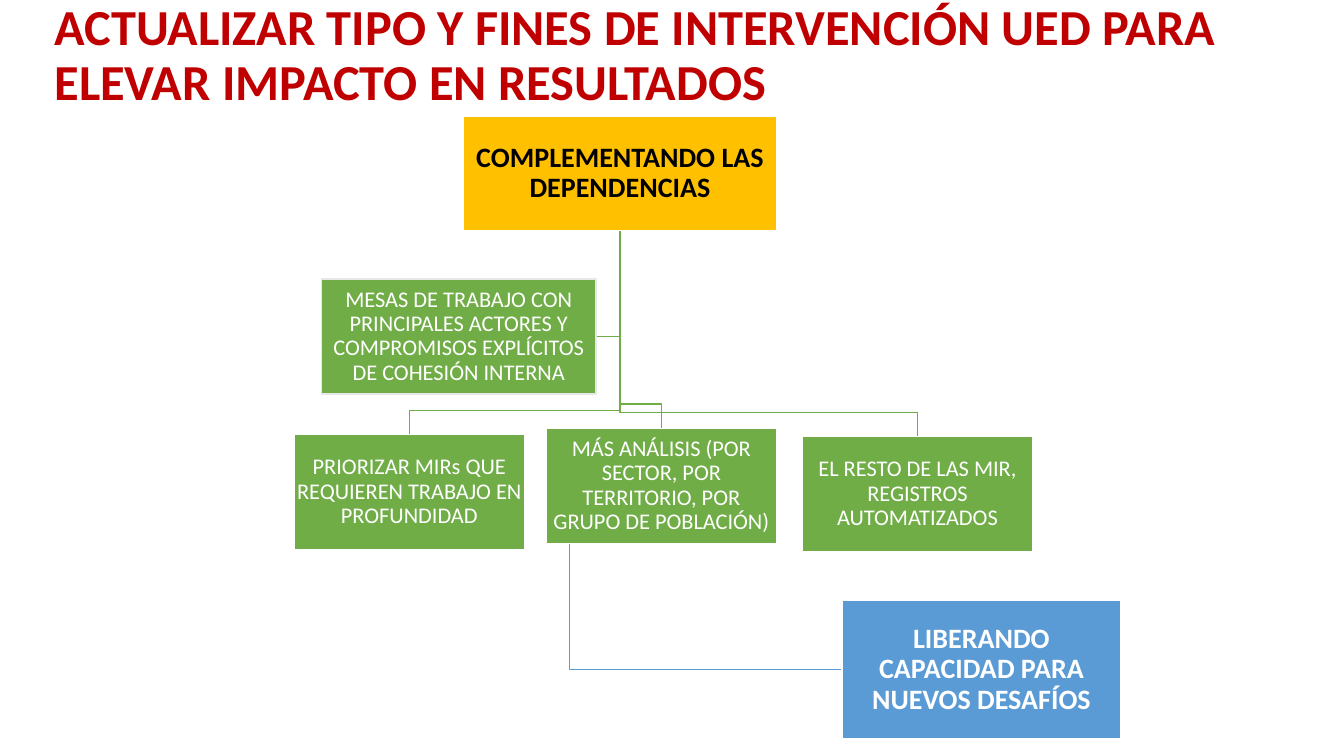
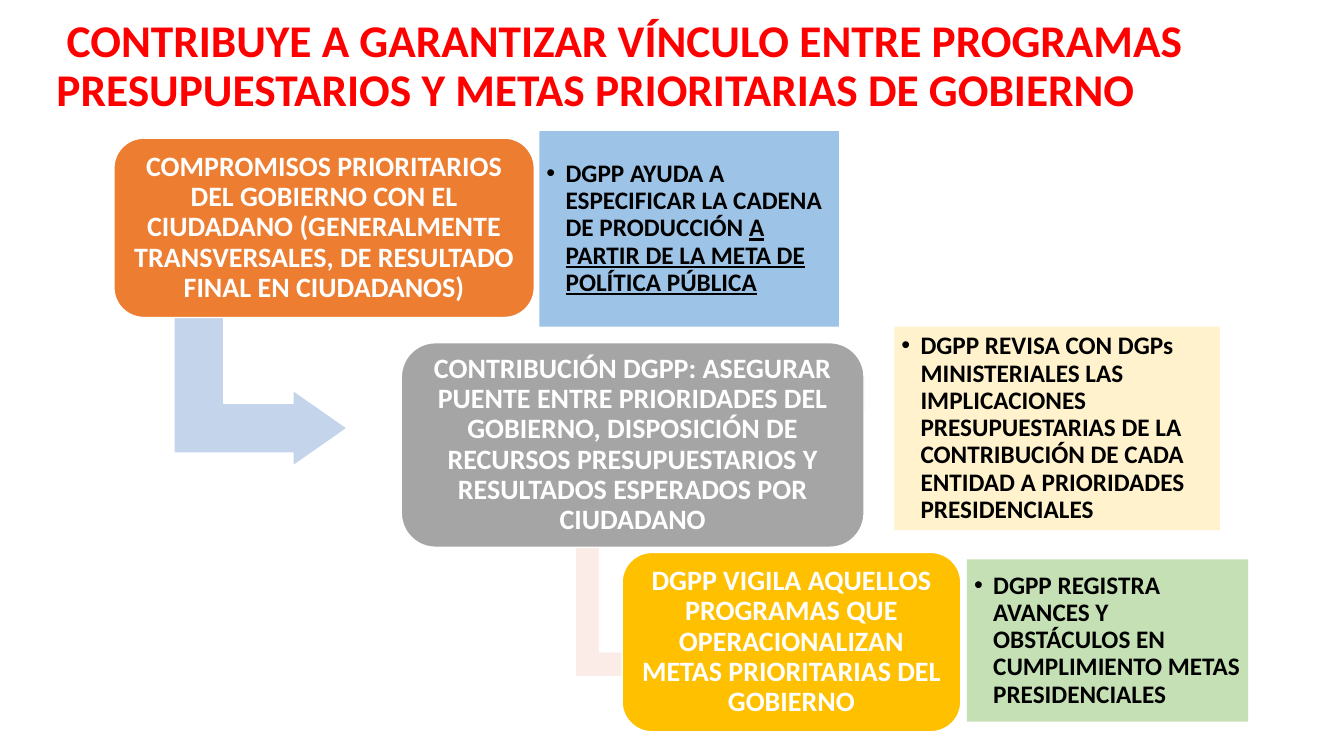
from lxml import etree
from pptx import Presentation, util as u
from pptx.dml.color import RGBColor
from pptx.enum import shapes, text
from pptx.oxml.ns import qn

FONT = "Calibri"
COLORS = {
    "dark red": "C00000", "red": "FF0000", "white": "FFFFFF", "black": "000000",
    "green": "70AD47", "blue": "5B9BD5", "gold": "FFC000", "orange": "ED7D31",
    "gray": "A5A5A5", "edge": "E7E7E7", "sky": "9DC3E6", "cream": "FFF2CC",
    "mint": "C5E0B4", "pale blue": "C4D5EB", "pale pink": "FCECE8",
}
SHAPE = shapes.MSO_SHAPE

CHART_TITLE = "ACTUALIZAR TIPO Y FINES DE INTERVENCIÓN UED PARA ELEVAR IMPACTO EN RESULTADOS"
MAIN = dict(size=20, bold=True)
DETAIL = dict(size=16, color="white")
# name: (left, top, width, height), fill, edge, wording, format
CHART_BOXES = {
    "root": ((4.6, 1.15, 3.1, 1.14), "gold", "white",
             "COMPLEMENTANDO LAS DEPENDENCIAS", dict(MAIN, color="black")),
    "prioritize": ((2.92, 4.31, 2.28, 1.14), "green", "white",
                   "PRIORIZAR MIRs QUE REQUIEREN TRABAJO EN PROFUNDIDAD", DETAIL),
    "rest": ((7.96, 4.33, 2.28, 1.14), "green", "white",
             "EL RESTO DE LAS MIR, REGISTROS AUTOMATIZADOS", DETAIL),
    "analysis": ((5.42, 4.25, 2.28, 1.14), "green", "white",
                 "MÁS ANÁLISIS (POR SECTOR, POR TERRITORIO, POR GRUPO DE POBLACIÓN)", DETAIL),
    "capacity": ((8.35, 5.96, 2.77, 1.37), "blue", "white",
                 "LIBERANDO CAPACIDAD PARA NUEVOS DESAFÍOS", dict(MAIN, color="white")),
    "tables": ((3.19, 2.77, 2.72, 1.14), "green", "edge",
               "MESAS DE TRABAJO CON PRINCIPALES ACTORES Y COMPROMISOS EXPLÍCITOS "
               "DE COHESIÓN INTERNA", DETAIL),
}
BRANCHES = ("analysis", "rest", "prioritize")
BRANCH_DROP = 0.24

STEPS_TITLE = (" CONTRIBUYE A GARANTIZAR VÍNCULO ENTRE PROGRAMAS PRESUPUESTARIOS "
               "Y METAS PRIORITARIAS DE GOBIERNO")
# Each step: its box, its note and, except for the last, the arrow to the next step
STEPS = [
    dict(box=(1.13, 1.37, 4.17, 1.78), fill="orange",
         label="COMPROMISOS PRIORITARIOS DEL GOBIERNO CON EL CIUDADANO "
               "(GENERALMENTE TRANSVERSALES, DE RESULTADO FINAL EN CIUDADANOS)",
         note_box=(5.35, 1.3, 2.97, 1.94), note_fill="sky",
         note=["DGPP AYUDA A ESPECIFICAR LA CADENA DE PRODUCCIÓN ",
               ("A PARTIR DE LA META DE POLÍTICA PÚBLICA", True)],
         arrow=(1.83, 3.01, 1.51, 1.72), arrow_fill="pale blue"),
    dict(box=(3.98, 3.4, 4.59, 2.03), fill="gray",
         label="CONTRIBUCIÓN DGPP: ASEGURAR PUENTE ENTRE PRIORIDADES DEL GOBIERNO, "
               "DISPOSICIÓN DE RECURSOS PRESUPUESTARIOS Y RESULTADOS ESPERADOS POR CIUDADANO",
         note_box=(8.87, 3.24, 3.23, 2.02), note_fill="cream",
         note="DGPP REVISA CON DGPs MINISTERIALES LAS IMPLICACIONES PRESUPUESTARIAS "
              "DE LA CONTRIBUCIÓN DE CADA ENTIDAD A PRIORIDADES PRESIDENCIALES",
         arrow=(5.32, 5.65, 1.51, 0.74), arrow_fill="pale pink"),
    dict(box=(6.17, 5.48, 3.36, 1.78), fill="gold",
         label="DGPP VIGILA AQUELLOS PROGRAMAS QUE OPERACIONALIZAN METAS PRIORITARIAS "
               "DEL GOBIERNO",
         note_box=(9.59, 5.55, 2.79, 1.61), note_fill="mint",
         note="DGPP REGISTRA AVANCES Y OBSTÁCULOS EN CUMPLIMIENTO METAS PRESIDENCIALES"),
]


def rgb(name):
    return RGBColor.from_string(COLORS[name])


def write(shape, content, size=16, color="black", bold=False, inset=None,
          align=text.PP_ALIGN.CENTER, bullet=False):
    """Write a string, or a list of strings and (string, underlined) pairs."""
    frame = shape.text_frame
    frame.word_wrap = True
    frame.auto_size = text.MSO_AUTO_SIZE.NONE
    frame.vertical_anchor = text.MSO_ANCHOR.MIDDLE
    if inset is not None:
        frame.margin_left = frame.margin_right = u.Inches(inset)
        frame.margin_top = frame.margin_bottom = u.Inches(inset)
    paragraph = frame.paragraphs[0]
    paragraph.alignment = align
    paragraph.line_spacing = 0.9
    if bullet:
        props = paragraph._p.get_or_add_pPr()
        props.set("marL", str(u.Inches(0.19)))
        props.set("indent", str(u.Inches(-0.19)))
        etree.SubElement(props, qn("a:buFont")).set("typeface", "Arial")
        etree.SubElement(props, qn("a:buChar")).set("char", "•")
    for part in [content] if isinstance(content, str) else content:
        words, underlined = (part, False) if isinstance(part, str) else part
        run = paragraph.add_run()
        run.text = words
        run.font.name, run.font.size = FONT, u.Pt(size)
        run.font.bold = bold
        run.font.color.rgb = rgb(color)
        if underlined:
            run.font.underline = True


def add_titled_slide(prs, title, box, size, color):
    slide = prs.slides.add_slide(prs.slide_layouts[5])
    heading = slide.shapes.title
    heading.left, heading.top, heading.width, heading.height = map(u.Inches, box)
    write(heading, title, size=size, color=color, bold=True, align=text.PP_ALIGN.LEFT)
    return slide


def add_block(slide, kind, box, fill, edge=None):
    block = slide.shapes.add_shape(kind, *map(u.Inches, box))
    block.shadow.inherit = False
    block.fill.solid()
    block.fill.fore_color.rgb = rgb(fill)
    if edge:
        block.line.color.rgb = rgb(edge)
        block.line.width = u.Pt(1)
    else:
        block.line.fill.background()
    return block


def add_elbow(slide, points, color):
    """Draw an open line through points given in inches."""
    start, *others = [(u.Inches(x), u.Inches(y)) for x, y in points]
    builder = slide.shapes.build_freeform(*start)
    builder.add_line_segments(others, close=False)
    elbow = builder.convert_to_shape()
    elbow.shadow.inherit = False
    elbow.fill.background()
    elbow.line.color.rgb = rgb(color)
    elbow.line.width = u.Pt(1)


def build_chart_slide(prs):
    slide = add_titled_slide(prs, CHART_TITLE, (0.44, 0.16, 12.48, 0.81), 36, "dark red")
    place = {name: spec_row[0] for name, spec_row in CHART_BOXES.items()}
    left, top, width, height = place["root"]
    trunk, root_bottom = left + width / 2, top + height

    left, top, width, height = place["tables"]
    middle = top + height / 2
    add_elbow(slide, [(trunk, root_bottom), (trunk, middle), (left + width, middle)], "green")

    left, top, width, height = place["analysis"]
    stem = left + width / 10
    end_left, end_top, _, end_height = place["capacity"]
    middle = end_top + end_height / 2
    add_elbow(slide, [(stem, top + height), (stem, middle), (end_left, middle)], "blue")

    for name in BRANCHES:
        left, top, width, _ = place[name]
        center, bend = left + width / 2, top - BRANCH_DROP
        add_elbow(slide, [(trunk, root_bottom), (trunk, bend), (center, bend), (center, top)],
                  "green")

    for box, fill, edge, wording, style in CHART_BOXES.values():
        write(add_block(slide, SHAPE.RECTANGLE, box, fill, edge), wording, inset=0.01, **style)


def build_steps_slide(prs):
    slide = add_titled_slide(prs, STEPS_TITLE, (0.46, 0.25, 12.6, 0.84), 32.4, "red")
    for step in STEPS:
        if "arrow" in step:
            arrow = add_block(slide, SHAPE.BENT_UP_ARROW, step["arrow"], step["arrow_fill"], "white")
            arrow.rotation = 90
            for index, share in enumerate((0.328, 0.25, 0.358)):
                arrow.adjustments[index] = share
        card = add_block(slide, SHAPE.ROUNDED_RECTANGLE, step["box"], step["fill"], "white")
        card.adjustments[0] = 0.167
        write(card, step["label"], color="white", inset=0.08, **MAIN)
        note = add_block(slide, SHAPE.RECTANGLE, step["note_box"], step["note_fill"])
        write(note, step["note"], size=18, bold=True, inset=0.07,
              align=text.PP_ALIGN.LEFT, bullet=True)


def main():
    prs = Presentation()
    prs.slide_width, prs.slide_height = u.Inches(13.33), u.Inches(7.5)
    build_chart_slide(prs)
    build_steps_slide(prs)
    prs.save("out.pptx")


if __name__ == "__main__":
    main()
